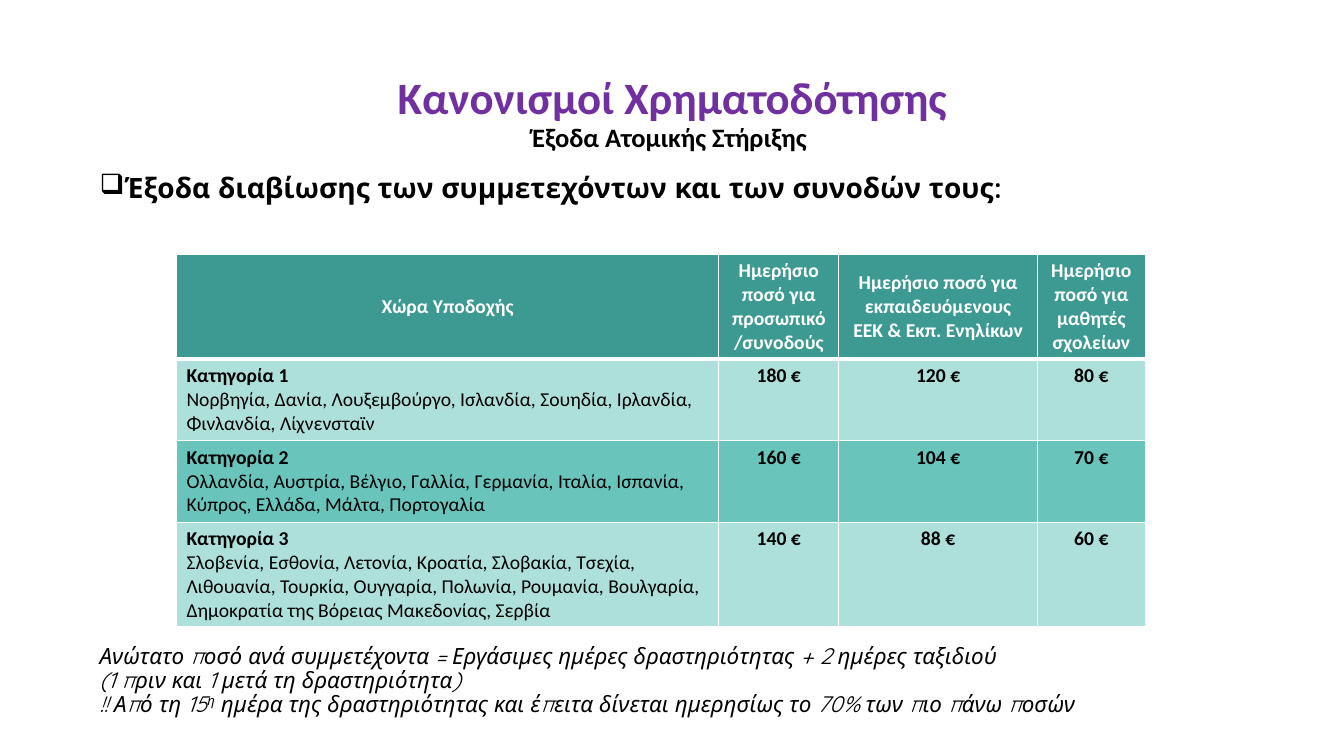
from dataclasses import dataclass

from lxml import etree
from pptx import Presentation
from pptx.dml.color import RGBColor
from pptx.enum import text as t
from pptx.oxml import ns
from pptx.util import Inches, Pt

PURPLE = RGBColor(0x70, 0x30, 0xA0)
BLACK = RGBColor(0, 0, 0)
WHITE = RGBColor(0xFF, 0xFF, 0xFF)
HEADER = RGBColor(0x3C, 0x9A, 0x92)
LIGHT = RGBColor(0xAE, 0xE0, 0xDB)
MEDIUM = RGBColor(0x69, 0xC5, 0xBC)
LEFT, CENTER = t.PP_ALIGN.LEFT, t.PP_ALIGN.CENTER
TOP, MIDDLE, BOTTOM = t.MSO_ANCHOR.TOP, t.MSO_ANCHOR.MIDDLE, t.MSO_ANCHOR.BOTTOM


@dataclass
class Style:
    size: int
    name: str
    color: RGBColor = BLACK
    bold: bool = False
    italic: bool = False


@dataclass
class Category:
    title: str
    countries: str
    amounts: tuple[int, int, int]


TITLE = Style(32, "Calibri", PURPLE, bold=True)
SUBTITLE = Style(19, "Calibri", bold=True)
HEADING = Style(20, "Quicksand", bold=True)
NOTE = Style(16, "Quicksand", italic=True)
HEAD_CELL = Style(14, "Calibri", WHITE, bold=True)
BOLD_CELL = Style(14, "Calibri", bold=True)
CELL = Style(14, "Calibri")

COLUMN_WIDTHS = (5.38, 1.19, 1.97, 1.07)
ROW_HEIGHTS = (1.04, 0.81, 0.81, 1.04)
HEADERS = (
    ("Χώρα Υποδοχής",),
    ("Ημερήσιο ποσό για προσωπικό/συνοδούς",),
    ("Ημερήσιο ποσό για εκπαιδευόμενους", "EEK & Εκπ. Ενηλίκων"),
    ("Ημερήσιο ποσό για μαθητές σχολείων",),
)
CATEGORIES = (
    Category("Κατηγορία 1",
             "Νορβηγία, Δανία, Λουξεμβούργο, Ισλανδία, Σουηδία, Ιρλανδία, "
             "Φινλανδία, Λίχνενσταϊν", (180, 120, 80)),
    Category("Κατηγορία 2",
             "Ολλανδία, Αυστρία, Βέλγιο, Γαλλία, Γερμανία, Ιταλία, Ισπανία, "
             "Κύπρος, Ελλάδα, Μάλτα, Πορτογαλία", (160, 104, 70)),
    Category("Κατηγορία 3",
             "Σλοβενία, Εσθονία, Λετονία, Κροατία, Σλοβακία, Τσεχία, Λιθουανία, "
             "Τουρκία, Ουγγαρία, Πολωνία, Ρουμανία, Βουλγαρία, "
             "Δημοκρατία της Bόρειας Μακεδονίας, Σερβία", (140, 88, 60)),
)
NOTES = (
    ("Ανώτατο ποσό ανά συμμετέχοντα = Εργάσιμες ημέρες δραστηριότητας "
     "+ 2 ημέρες ταξιδιού",),
    ("(1 πριν και 1 μετά τη δραστηριότητα)",),
    ("!! Από τη 15", "η", " ημέρα της δραστηριότητας και έπειτα δίνεται "
     "ημερησίως το 70% των πιο πάνω ποσών"),
)


def add_run(p, text: str, style: Style):
    r = p.add_run()
    r.text = text
    formats = {"size": Pt(style.size), "name": style.name,
               "bold": style.bold, "italic": style.italic}
    for key, value in formats.items():
        setattr(r.font, key, value)
    r.font.color.rgb = style.color
    return r


def add_box(s, left: float, top: float, width: float, height: float, anchor=TOP):
    tf = s.shapes.add_textbox(*map(Inches, (left, top, width, height))).text_frame
    tf.word_wrap = True
    tf.vertical_anchor = anchor
    return tf


def next_paragraph(tf, index: int, align=LEFT, spacing: float = 0.9):
    """Return the first paragraph of the frame, or a new one after it."""
    p = tf.paragraphs[0] if index == 0 else tf.add_paragraph()
    p.alignment, p.line_spacing = align, spacing
    return p


def add_bullet(p, char: str, indent: float) -> None:
    pPr = p._p.get_or_add_pPr()
    pPr.set("marL", str(Inches(indent)))
    pPr.set("indent", str(-Inches(indent)))
    etree.SubElement(pPr, ns.qn("a:buChar")).set("char", char)


def set_borders(cell, **widths: float) -> None:
    tcPr = cell._tc.get_or_add_tcPr()
    for index, side in enumerate("LRTB"):
        ln = etree.Element(ns.qn(f"a:ln{side}"), w=str(Pt(widths.get(side, 1))))
        fill = etree.SubElement(ln, ns.qn("a:solidFill"))
        etree.SubElement(fill, ns.qn("a:srgbClr")).set("val", str(WHITE))
        tcPr.insert(index, ln)


def fill_cell(cell, lines, color: RGBColor, align=CENTER, anchor=TOP) -> None:
    """Write (text, style) lines into a cell and colour it."""
    cell.vertical_anchor = anchor
    cell.fill.solid()
    cell.fill.fore_color.rgb = color
    for i, (text, style) in enumerate(lines):
        add_run(next_paragraph(cell.text_frame, i, align, 1.0), text, style)


def add_rates_table(s) -> None:
    frame = s.shapes.add_table(len(ROW_HEIGHTS), len(COLUMN_WIDTHS), Inches(1.75),
                               Inches(2.52), Inches(sum(COLUMN_WIDTHS)),
                               Inches(sum(ROW_HEIGHTS)))
    table = frame.table
    for column, width in zip(table.columns, COLUMN_WIDTHS):
        column.width = Inches(width)
    for row, height in zip(table.rows, ROW_HEIGHTS):
        row.height = Inches(height)
    for col, lines in enumerate(HEADERS):
        cell = table.cell(0, col)
        fill_cell(cell, [(line, HEAD_CELL) for line in lines], HEADER, anchor=MIDDLE)
        set_borders(cell, B=3)
    for row, category in enumerate(CATEGORIES, 1):
        color = LIGHT if row % 2 else MEDIUM
        names = [(category.title, BOLD_CELL), (category.countries, CELL)]
        fill_cell(table.cell(row, 0), names, color, LEFT)
        for col, amount in enumerate(category.amounts, 1):
            fill_cell(table.cell(row, col), [(f"{amount} €", BOLD_CELL)], color)
        for cell in table.rows[row].cells:
            set_borders(cell, T=3 if row == 1 else 1)


def main() -> None:
    prs = Presentation()
    prs.slide_width, prs.slide_height = Inches(13.33), Inches(7.5)
    s = prs.slides.add_slide(prs.slide_layouts[6])

    p = next_paragraph(add_box(s, 1.67, 0.68, 10, 0.89, BOTTOM), 0, CENTER)
    add_run(p, "Κανονισμοί Χρηματοδότησης", TITLE)
    p.add_line_break()
    add_run(p, "Έξοδα Ατομικής Στήριξης ", SUBTITLE)

    p = next_paragraph(add_box(s, 0.89, 1.68, 11.33, 0.45), 0)
    add_bullet(p, "❑", 0.2)
    add_run(p, "Έξοδα διαβίωσης των συμμετεχόντων και των συνοδών τους:", HEADING)

    add_rates_table(s)

    tf = add_box(s, 0.89, 6.35, 11.33, 0.95)
    for i, parts in enumerate(NOTES):
        p = next_paragraph(tf, i)
        for part in parts:
            r = add_run(p, part, NOTE)
            if part == "η":
                r._r.get_or_add_rPr().set("baseline", "30000")

    prs.save("out.pptx")


if __name__ == "__main__":
    main()
